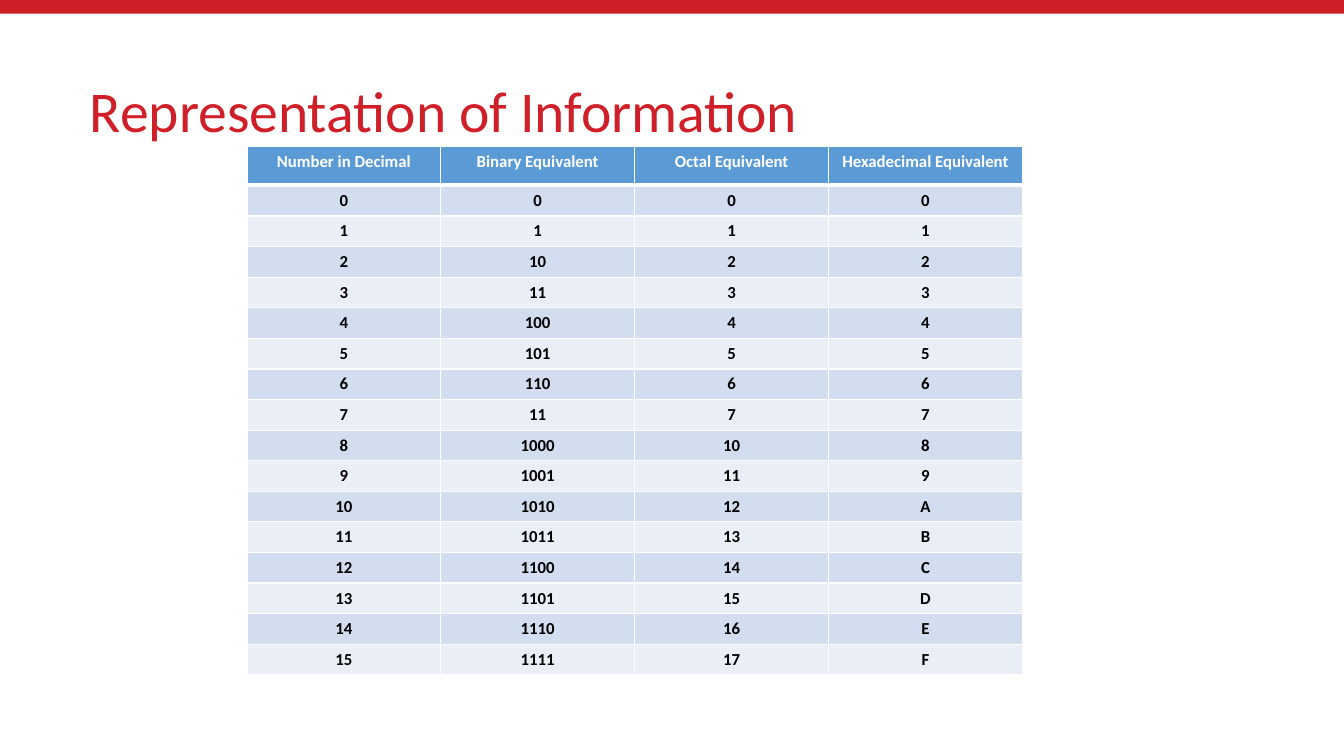
from lxml.etree import SubElement
from pptx import Presentation
from pptx.dml.color import RGBColor
from pptx.enum.shapes import MSO_SHAPE
from pptx.enum.text import MSO_ANCHOR, PP_ALIGN
from pptx.oxml.ns import qn
from pptx.util import Pt

COLORS = {
    "accent": "CF1F28",
    "header": "5B9BD5",
    "odd_row": "D2DEEF",
    "even_row": "EAEFF7",
    "white": "FFFFFF",
    "black": "000000",
}
HEADINGS = ["Number in Decimal", "Binary Equivalent", "Octal Equivalent", "Hexadecimal Equivalent"]
SHOWN_BINARY = {7: "11"}  # the slide shows 11 for seven
NUMBERS = [
    [str(n), SHOWN_BINARY.get(n, f"{n:b}"), f"{n:o}", f"{n:X}"] for n in range(16)
]


def rgb(name):
    return RGBColor.from_string(COLORS[name])


class SlideBuilder:
    FONT = "Calibri"

    def __init__(self, slide):
        self.slide = slide

    def style(self, paragraph, color, align, **formats):
        paragraph.alignment = align
        for key, value in {"name": self.FONT, **formats}.items():
            setattr(paragraph.font, key, value)
        paragraph.font.color.rgb = rgb(color)

    def bar(self, left, top, width, height, color):
        bar = self.slide.shapes.add_shape(
            MSO_SHAPE.RECTANGLE, Pt(left), Pt(top), Pt(width), Pt(height))
        bar.shadow.inherit = False
        bar.fill.solid()
        bar.fill.fore_color.rgb = rgb(color)
        bar.line.fill.background()

    def title(self, text, left, top, width, height):
        title = self.slide.shapes.title
        box = {"left": left, "top": top, "width": width, "height": height}
        for key, value in box.items():
            setattr(title, key, Pt(value))
        title.text_frame.text = text
        title.text_frame.vertical_anchor = MSO_ANCHOR.MIDDLE
        heading = title.text_frame.paragraphs[0]
        heading.line_spacing = 0.9
        self.style(heading, "accent", PP_ALIGN.LEFT, size=Pt(41.2))

    def borders(self, cell, widths):
        """Draw white cell edges; widths maps L, R, T and B to points."""
        properties = cell._tc.get_or_add_tcPr()
        for side, width in widths.items():
            edge = SubElement(properties, qn(f"a:ln{side}"), w=str(Pt(width)))
            fill = SubElement(edge, qn("a:solidFill"))
            SubElement(fill, qn("a:srgbClr"), val=COLORS["white"])

    def cell(self, cell, text, fill, color, widths):
        self.borders(cell, widths)
        cell.fill.solid()
        cell.fill.fore_color.rgb = rgb(fill)
        cell.text = text
        self.style(cell.text_frame.paragraphs[0], color, PP_ALIGN.CENTER,
                   size=Pt(12), bold=True)

    def table(self, rows, left, top, width, header_height, row_height):
        height = header_height + row_height * (len(rows) - 1)
        table = self.slide.shapes.add_table(
            len(rows), len(rows[0]), Pt(left), Pt(top), Pt(width), Pt(height)).table
        for r, values in enumerate(rows):
            table.rows[r].height = Pt(row_height if r else header_height)
            fill = ("odd_row" if r % 2 else "even_row") if r else "header"
            widths = {"L": 1, "R": 1, "T": 3 if r == 1 else 1, "B": 1 if r else 3}
            for c, value in enumerate(values):
                self.cell(table.cell(r, c), value, fill, "black" if r else "white", widths)


def main():
    deck = Presentation()
    deck.slide_width, deck.slide_height = Pt(960), Pt(540)
    builder = SlideBuilder(deck.slides.add_slide(deck.slide_layouts[5]))
    builder.bar(0, 0, 960, 9.8, "accent")
    builder.title("Representation of Information", 57, 28.8, 846.7, 104.4)
    builder.table([HEADINGS] + NUMBERS, 176.4, 104.6, 554, 27.8, 21.85)
    deck.save("out.pptx")


if __name__ == "__main__":
    main()
